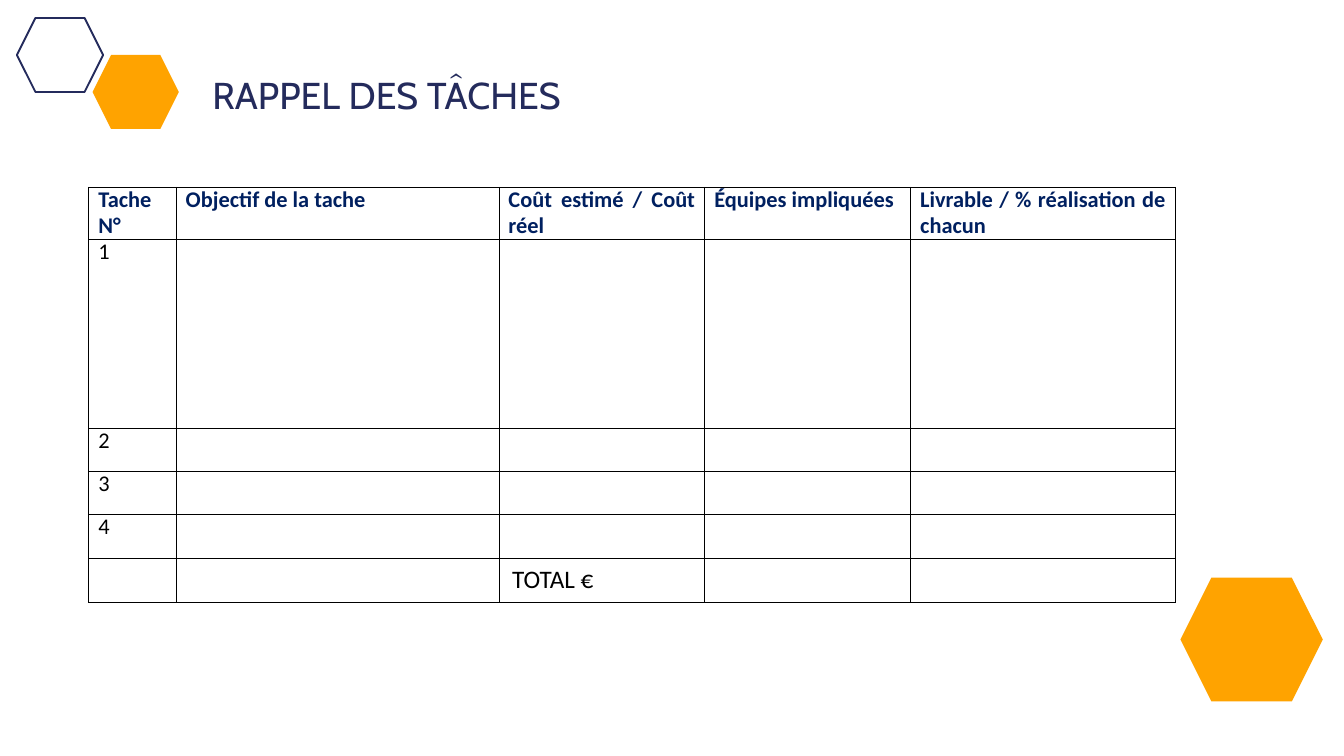
from lxml import etree
from pptx import Presentation
from pptx import util as u
from pptx.dml.color import RGBColor
from pptx.enum import shapes, text
from pptx.oxml import ns

NAVY = RGBColor(0x24, 0x2B, 0x5C)
HEADER_BLUE = RGBColor(0x00, 0x20, 0x60)
ORANGE = RGBColor(0xFF, 0xA3, 0x00)
BLACK = RGBColor(0, 0, 0)

TITLE_FONT = {"name": "Cabin", "size": u.Pt(20), "bold": False}
HEADER_FONT = {"name": "Calibri", "size": u.Pt(12), "bold": True}
BODY_FONT = HEADER_FONT | {"bold": False}
TOTAL_FONT = BODY_FONT | {"size": u.Pt(13.5)}

JUSTIFIED = {"alignment": text.PP_ALIGN.JUSTIFY, "line_spacing": u.Pt(14)}
LEFT = {"alignment": text.PP_ALIGN.LEFT}
TIGHT = {"margin_left": u.Cm(0.18), "margin_right": u.Cm(0.18),
         "margin_top": 0, "margin_bottom": 0}
ROOMY = {"margin_left": u.Cm(0.25), "margin_right": u.Cm(0.25),
         "margin_top": u.Cm(0.13), "margin_bottom": u.Cm(0.13)}

HEADERS = ["Tache N°", "Objectif de la tache", "Coût estimé / Coût réel",
           "Équipes impliquées", "Livrable / % réalisation de chacun"]
COLUMN_WIDTHS = [1.65, 6.1, 3.89, 3.89, 5.0]
ROW_HEIGHTS = [0.98, 3.57, 0.81, 0.81, 0.83, 0.83]
TASK_COUNT = 4
TOTAL_COLUMN = 2


def apply_format(target, values):
    """Set each attribute of the target from a dict."""
    for name, value in values.items():
        setattr(target, name, value)


def add_hexagon(slide, box, fill=None, line=None):
    """Place a hexagon in the box, filled or outlined."""
    shape = slide.shapes.add_shape(shapes.MSO_SHAPE.HEXAGON, *map(u.Cm, box))
    shape.shadow.inherit = False
    shape.adjustments[0] = 0.25
    if fill is None:
        shape.fill.background()
    else:
        shape.fill.solid()
        shape.fill.fore_color.rgb = fill
    if line is None:
        shape.line.fill.background()
    else:
        shape.line.color.rgb = line
        shape.line.width = u.Pt(1)


def add_decoration(slide, box):
    """Place the outlined and filled hexagon pair, and the large corner one."""
    left, top, width, height = box
    small = (1.63, 1.4)
    large = (2.69, 2.34)
    add_hexagon(slide, (left, top, *small), line=NAVY)
    add_hexagon(slide, (left + 1.43, top + 0.7, *small), fill=ORANGE)
    add_hexagon(slide, (left + width - large[0], top + height - large[1], *large),
                fill=ORANGE)


def place_title(slide, box):
    """Move the title placeholder to the box and format its text."""
    title = slide.shapes.title
    apply_format(title, dict(zip(("left", "top", "width", "height"), map(u.Cm, box))))
    frame = title.text_frame
    frame.text = "RAPPEL DES TÂCHES"
    apply_format(frame, {"vertical_anchor": text.MSO_ANCHOR.MIDDLE,
                         "auto_size": text.MSO_AUTO_SIZE.NONE, "word_wrap": True})
    paragraph = frame.paragraphs[0]
    apply_format(paragraph, LEFT | {"line_spacing": 0.9})
    font = paragraph.runs[0].font
    apply_format(font, TITLE_FONT)
    font.color.rgb = NAVY


def add_borders(cell):
    """Draw thin black lines on the four sides of a cell."""
    properties = cell._tc.get_or_add_tcPr()
    for side in ("a:lnL", "a:lnR", "a:lnT", "a:lnB"):
        line = etree.SubElement(properties, ns.qn(side), w=str(u.Pt(0.5)))
        fill = etree.SubElement(line, ns.qn("a:solidFill"))
        etree.SubElement(fill, ns.qn("a:srgbClr"), val=str(BLACK))


def fill_cell(cell, content, font_format, color, paragraph_format, margins):
    """Write and format one cell, keeping small type in an empty one."""
    add_borders(cell)
    cell.fill.background()
    apply_format(cell, margins)
    paragraph = cell.text_frame.paragraphs[0]
    apply_format(paragraph, paragraph_format)
    if content:
        run = paragraph.add_run()
        run.text = content
        apply_format(run.font, font_format)
        run.font.color.rgb = color
    else:
        etree.SubElement(paragraph._p, ns.qn("a:endParaRPr"), sz="1200")


def add_task_table(slide, box):
    """Place the table of tasks, with its header and total rows, in the box."""
    frame = slide.shapes.add_table(len(ROW_HEIGHTS), len(HEADERS), *map(u.Cm, box))
    table = frame.table
    apply_format(table, {"first_row": False, "horz_banding": False})
    for column, width in zip(table.columns, COLUMN_WIDTHS):
        column.width = u.Cm(width)
    for row, height in zip(table.rows, ROW_HEIGHTS):
        row.height = u.Cm(height)

    blanks = [""] * (len(HEADERS) - 1)
    tasks = [[str(number), *blanks] for number in range(1, TASK_COUNT + 1)]
    total = ["TOTAL €" if index == TOTAL_COLUMN else "" for index in range(len(HEADERS))]
    for row, contents in zip(table.rows, [HEADERS, *tasks, total]):
        for cell, content in zip(row.cells, contents):
            if contents is HEADERS:
                style = (HEADER_FONT, HEADER_BLUE, JUSTIFIED, TIGHT)
            elif contents is total and content:
                style = (TOTAL_FONT, BLACK, LEFT, ROOMY)
            else:
                style = (BODY_FONT, BLACK, JUSTIFIED, TIGHT)
            fill_cell(cell, content, *style)


def main():
    """Build the slide and save the presentation."""
    presentation = Presentation()
    presentation.slide_width = u.Cm(25.4)
    presentation.slide_height = u.Cm(14.29)
    slide = presentation.slides.add_slide(presentation.slide_layouts[5])
    add_decoration(slide, (0.32, 0.34, 24.68, 12.92))
    place_title(slide, (3.76, 0.76, 19.89, 2.18))
    add_task_table(slide, (1.68, 3.54, sum(COLUMN_WIDTHS), sum(ROW_HEIGHTS)))
    presentation.save("out.pptx")


if __name__ == "__main__":
    main()
